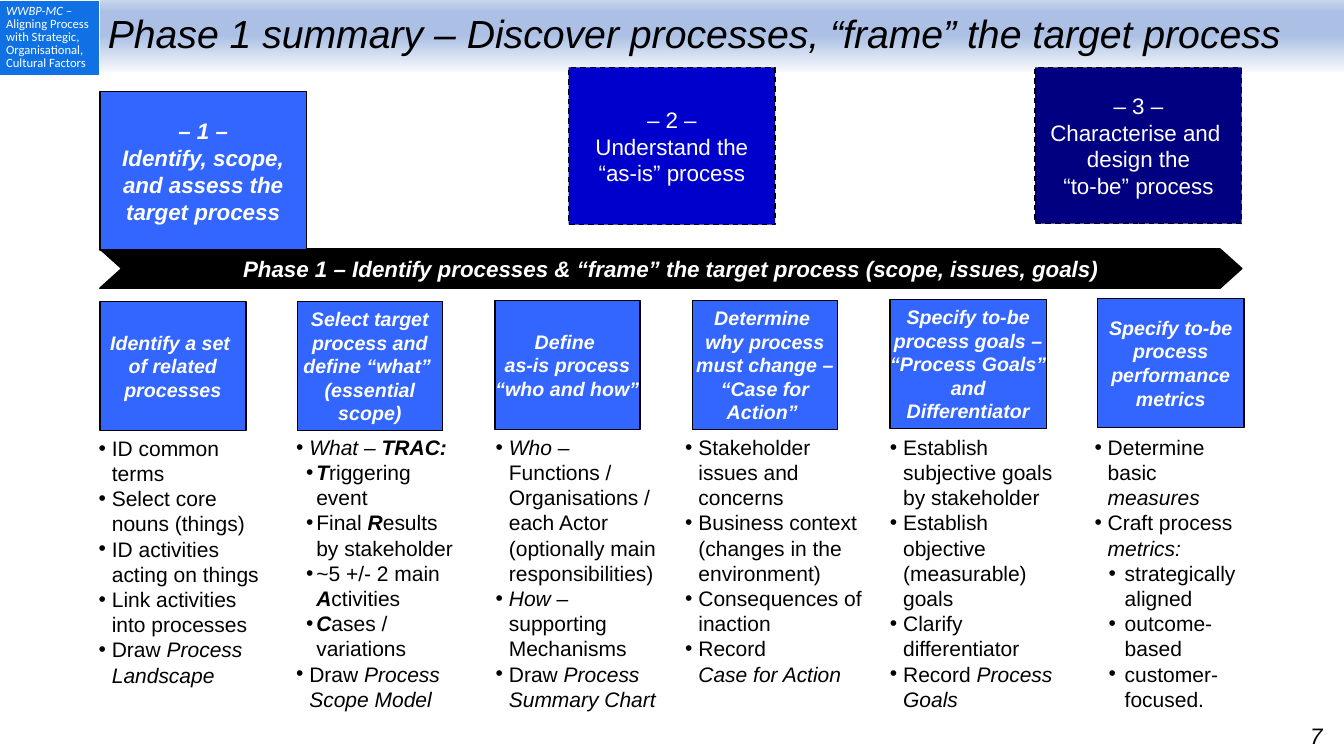
from copy import deepcopy

from lxml import etree
from pptx import Presentation
from pptx import util as u
from pptx.dml.color import RGBColor
from pptx.enum import dml, shapes, text
from pptx.oxml import ns

BLACK = RGBColor(0x00, 0x00, 0x00)
WHITE = RGBColor(0xFF, 0xFF, 0xFF)
TAG_BLUE = RGBColor(0x10, 0x71, 0xE5)
BRIGHT_BLUE = RGBColor(0x33, 0x66, 0xFF)
MEDIUM_BLUE = RGBColor(0x00, 0x00, 0xCC)
NAVY = RGBColor(0x00, 0x00, 0x80)
FADE_MIDDLE = RGBColor(0xAB, 0xC0, 0xE4)
HEADER_FADE = [(0, RGBColor(0xF6, 0xF8, 0xFC)), (0.51, FADE_MIDDLE),
               (0.83, FADE_MIDDLE), (1, RGBColor(0xC7, 0xD5, 0xED))]

# Bullet kinds: text margin and hanging indent, in points
BULLETS = {"main": (9.4, -9.4), "letter": (14.4, -7.2), "sub": (21.6, -11.5)}

# Phases: box, fill, span style, paragraphs
PHASES = [
    ((71.3, 65.5, 147.6, 113), BRIGHT_BLUE, "bi",
     ["– 1 –", "Identify, scope, and assess the target process"]),
    ((406.1, 48.2, 147.6, 112.3), MEDIUM_BLUE, "",
     ["– 2 –", "Understand the", "“as-is” process"]),
    ((739.4, 48.2, 147.6, 111.6), NAVY, "",
     ["– 3 –", "Characterise and ", "design the\n“to-be” process"]),
]

# Steps: card box, card title, list box, list items (bullet kind, then spans)
CARD_HEIGHT = 92.2
STEPS = [
    ((71.3, 215.3, 104.4), "Identify a set \nof related processes",
     (63.4, 307.4, 139.7, 189.4), [
         ("main", ("ID common terms", "")),
         ("main", ("Select core nouns (things)", "")),
         ("main", ("ID activities acting on things", "")),
         ("main", ("Link activities into processes", "")),
         ("main", ("Draw ", ""), ("Process Landscape", "i"))]),
    ((212.4, 215.3, 103.7),
     "Select target process and define “what” \n(essential scope)",
     (204.5, 306.7, 139, 207.4), [
         ("main", ("What – ", "i"), ("TRAC:", "bi")),
         ("letter", ("T", "bi"), ("riggering \nevent", "")),
         ("letter", ("Final ", ""), ("R", "bi"), ("esults \nby stakeholder", "")),
         ("letter", ("~5 +/- 2 main ", ""), ("A", "bi"), ("ctivities", "")),
         ("letter", ("C", "bi"), ("ases / variations", "")),
         ("main", ("Draw ", ""), ("Process Scope Model", "i"))]),
    ((353.5, 214.6, 103.7), "Define \nas-is process “who and how”",
     (347, 306.7, 133.2, 207.4), [
         ("main", ("Who – ", "i"),
          ("Functions / Organisations / each Actor \n(optionally main responsibilities)", "")),
         ("main", ("How", "i"), (" – supporting Mechanisms", "")),
         ("main", ("Draw ", ""), ("Process Summary Chart", "i"))]),
    ((494.6, 214.6, 103.7),
     "Determine \nwhy process must change – “Case for Action” ",
     (482.4, 306.7, 146.2, 189.4), [
         ("main", ("Stakeholder issues and concerns", "")),
         ("main", ("Business context (changes in the environment)", "")),
         ("main", ("Consequences of inaction", "")),
         ("main", ("Record \n", ""), ("Case for Action", "i"))]),
    ((635.8, 213.8, 111.6),
     "Specify to-be process goals – “Process Goals” and Differentiator",
     (628.6, 306.7, 146.2, 207.4), [
         ("main", ("Establish subjective goals\nby stakeholder", "")),
         ("main", ("Establish objective (measurable) goals", "")),
         ("main", ("Clarify differentiator", "")),
         ("main", ("Record ", ""), ("Process Goals", "i"))]),
    ((784.1, 213.1, 104.4), "Specify to-be process performance metrics",
     (774.7, 306.7, 118.8, 207.4), [
         ("main", ("Determine basic ", ""), ("measures", "i")),
         ("main", ("Craft process ", ""), ("metrics:", "i")),
         ("sub", ("strategically aligned", "")),
         ("sub", ("outcome-based", "")),
         ("sub", ("customer-focused.", ""))]),
]


def points(box):
    return [u.Pt(length) for length in box]


def set_all(target, values):
    for name, value in values.items():
        setattr(target, name, value)


def add_span(para, words, style, size, color, face="Arial"):
    """Add styled words; each newline becomes a line break of the same size."""
    for index, line in enumerate(words.split("\n")):
        if index:
            para.add_line_break()
            line_break = para._p.findall(ns.qn("a:br"))[-1]
            line_break.append(deepcopy(span._r.get_or_add_rPr()))
        if line or not index:
            span = para.add_run()
            span.text = line
            set_all(span.font, {"name": face, "size": u.Pt(size),
                                "bold": "b" in style, "italic": "i" in style})
            span.font.color.rgb = color


def add_bullet(para, kind):
    margin, indent = BULLETS[kind]
    props = para._p.get_or_add_pPr()
    props.set("marL", str(u.Pt(margin)))
    props.set("indent", str(u.Pt(indent)))
    color = etree.SubElement(props, ns.qn("a:buClr"))
    etree.SubElement(color, ns.qn("a:srgbClr"), val=str(BLACK))
    etree.SubElement(props, ns.qn("a:buFont"), typeface="Arial")
    etree.SubElement(props, ns.qn("a:buChar"), char="•")


def paragraphs(frame, items):
    """Pair each item with its paragraph, adding paragraphs after the first."""
    for index, item in enumerate(items):
        yield (frame.add_paragraph() if index else frame.paragraphs[0]), item


def add_block(page, box, fill, lines, style, size, inset,
              kind=shapes.MSO_SHAPE.RECTANGLE, dash=None):
    """Filled, outlined shape with centred white text."""
    block = page.shapes.add_shape(kind, *points(box))
    block.shadow.inherit = False
    block.fill.solid()
    block.fill.fore_color.rgb = fill
    block.line.color.rgb = BLACK
    set_all(block.line, {"width": u.Pt(1), "dash_style": dash})
    set_all(block.text_frame, {
        "word_wrap": True, "vertical_anchor": text.MSO_ANCHOR.MIDDLE,
        "margin_left": 0, "margin_right": 0,
        "margin_top": u.Pt(inset), "margin_bottom": u.Pt(inset)})
    for para, line in paragraphs(block.text_frame, lines):
        para.alignment = text.PP_ALIGN.CENTER
        add_span(para, line, style, size, WHITE)
    return block


def add_course_tag(page, box):
    table = page.shapes.add_table(1, 1, *points(box)).table
    set_all(table, {"first_row": False, "horz_banding": False})
    cell = table.cell(0, 0)
    cell.fill.solid()
    cell.fill.fore_color.rgb = TAG_BLUE
    set_all(cell, {"margin_left": u.Pt(5.8), "margin_right": u.Pt(5.8),
                   "margin_top": u.Pt(3.6), "margin_bottom": u.Pt(3.6)})
    para = cell.text_frame.paragraphs[0]
    para.line_spacing = 0.85
    add_span(para, "WWBP-MC – \n", "i", 9, WHITE, "Calibri")
    add_span(para, "Aligning Process with Strategic, Organisational, Cultural Factors",
             "", 9, WHITE, "Calibri")


def add_header(page, box):
    left, top, width, height = box
    # Gradient bar
    bar = page.shapes.add_shape(shapes.MSO_SHAPE.RECTANGLE, *points(box))
    bar.shadow.inherit = False
    bar.line.fill.background()
    bar.fill.gradient()
    bar.fill.gradient_angle = 90
    stops = bar._element.find(".//" + ns.qn("a:gsLst"))
    while len(stops) < len(HEADER_FADE):
        stops.append(deepcopy(stops[0]))
    for stop, (position, color) in zip(bar.fill.gradient_stops, HEADER_FADE):
        stop.position = position
        stop.color.rgb = color
    # Title, raised above the bar
    title = page.shapes.title
    page.shapes._spTree.append(title._element)
    title_box = points((left - 1.5, top, width - 10, height))
    set_all(title, dict(zip(("left", "top", "width", "height"), title_box)))
    set_all(title.text_frame, {"word_wrap": True, "auto_size": text.MSO_AUTO_SIZE.NONE,
                               "vertical_anchor": text.MSO_ANCHOR.MIDDLE})
    para = title.text_frame.paragraphs[0]
    set_all(para, {"alignment": text.PP_ALIGN.LEFT, "line_spacing": 0.9})
    add_span(para, "Phase 1 summary – Discover processes, “frame” the target process",
             "i", 28, BLACK)


def add_page_number(page, box):
    number = page.shapes.add_textbox(*points(box))
    number.fill.solid()
    number.fill.fore_color.rgb = WHITE
    set_all(number.text_frame, {"word_wrap": True, "margin_left": 0, "margin_right": 0,
                                "margin_top": 0, "margin_bottom": 0})
    para = number.text_frame.paragraphs[0]
    para.alignment = text.PP_ALIGN.RIGHT
    add_span(para, "7", "i", 16, BLACK)


def add_step_list(page, box, items):
    frame = page.shapes.add_textbox(*points(box)).text_frame
    frame.word_wrap = True
    for para, (kind, *spans) in paragraphs(frame, items):
        add_bullet(para, kind)
        for words, style in spans:
            add_span(para, words, style, 15, BLACK)


def main():
    deck = Presentation()
    set_all(deck, {"slide_width": u.Pt(960), "slide_height": u.Pt(540)})
    page = deck.slides.add_slide(deck.slide_layouts[5])
    add_course_tag(page, (-1.4, 0, 72.7, 51.8))
    add_header(page, (71.3, 0, 888.7, 51.1))
    add_page_number(page, (876.2, 515.5, 68.4, 19.4))
    # Phase banner
    banner = add_block(
        page, (71.3, 177.8, 815.8, 28.1), BLACK,
        ["Phase 1 – Identify processes & “frame” the target process (scope, issues, goals)"],
        "bi", 16, 3.6, shapes.MSO_SHAPE.CHEVRON)
    banner.adjustments[0] = 0.555
    # Phases; the current one has a solid outline
    for index, (box, fill, style, lines) in enumerate(PHASES):
        dash = dml.MSO_LINE.DASH if index else None
        add_block(page, box, fill, lines, style, 16, 7.2, dash=dash)
    # Steps of the first phase
    for card_box, heading, list_box, items in STEPS:
        add_step_list(page, list_box, items)
        add_block(page, (*card_box, CARD_HEIGHT), BRIGHT_BLUE, [heading], "bi", 14, 3.6)
    deck.save("out.pptx")


if __name__ == "__main__":
    main()
